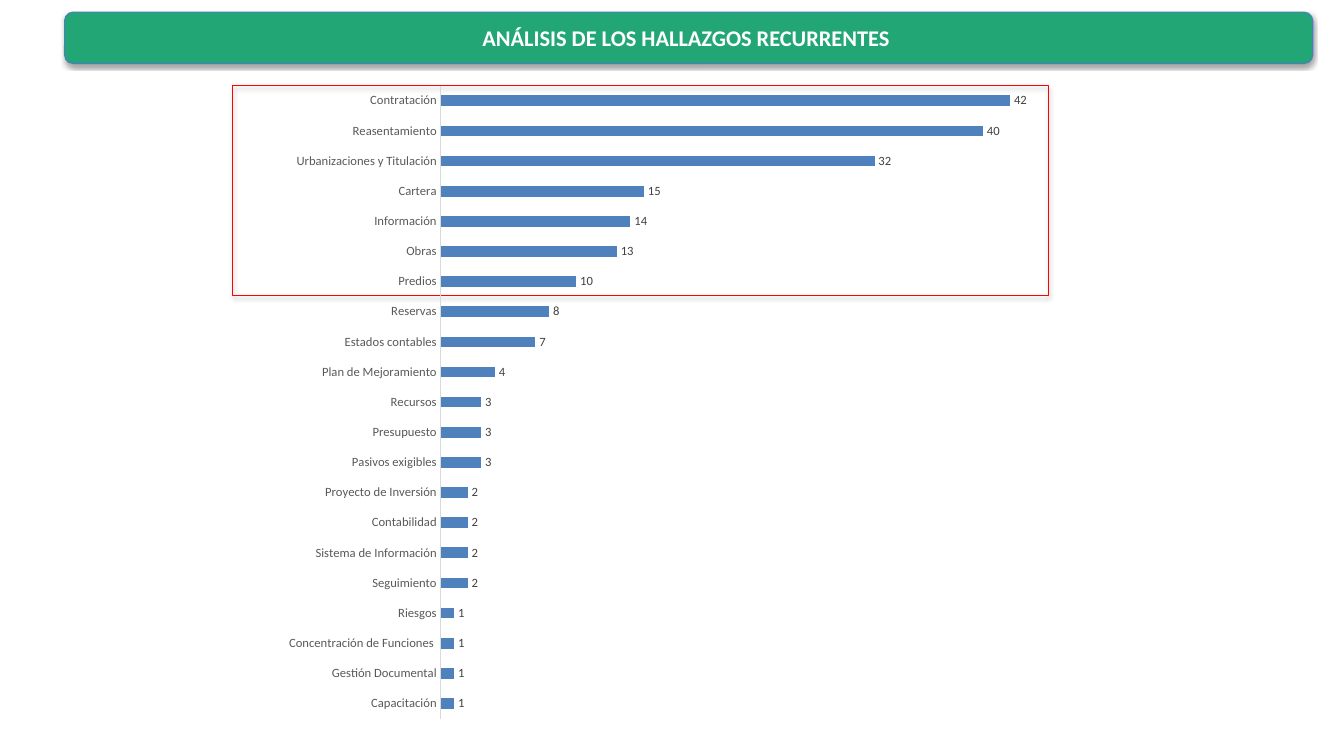
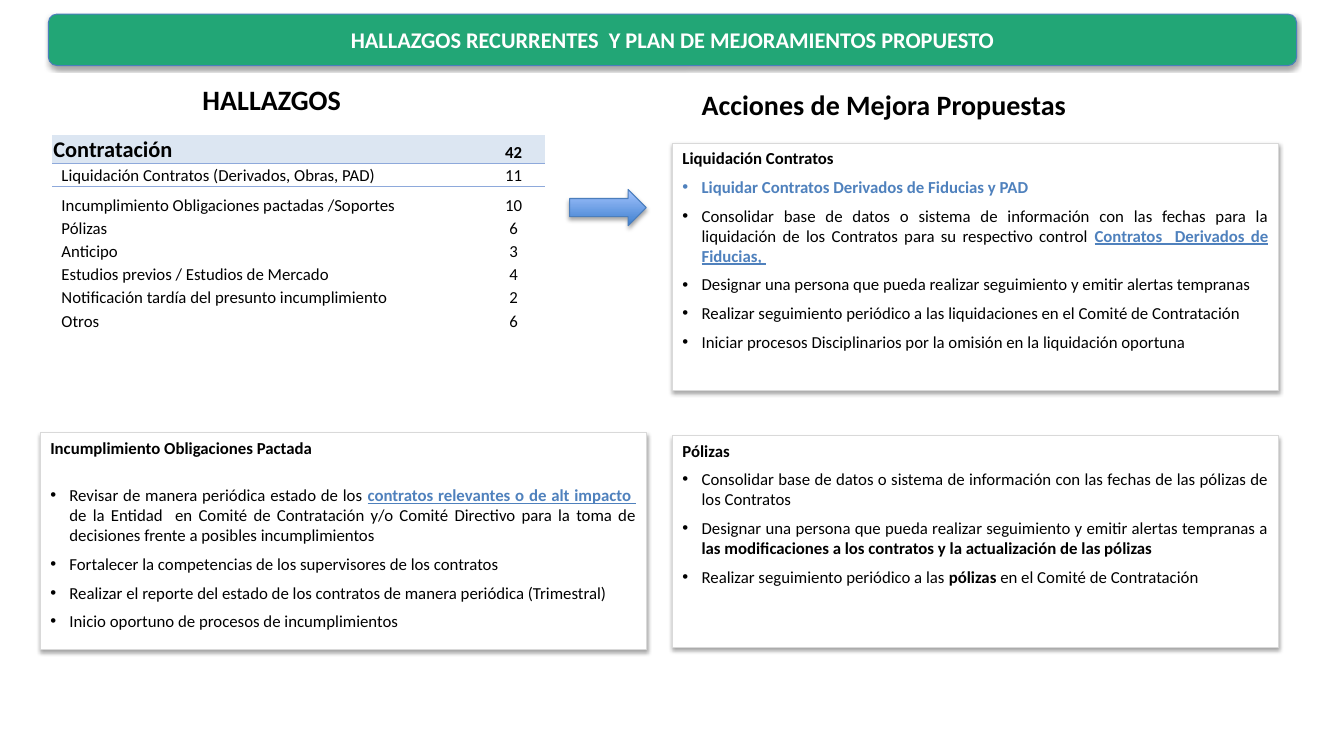
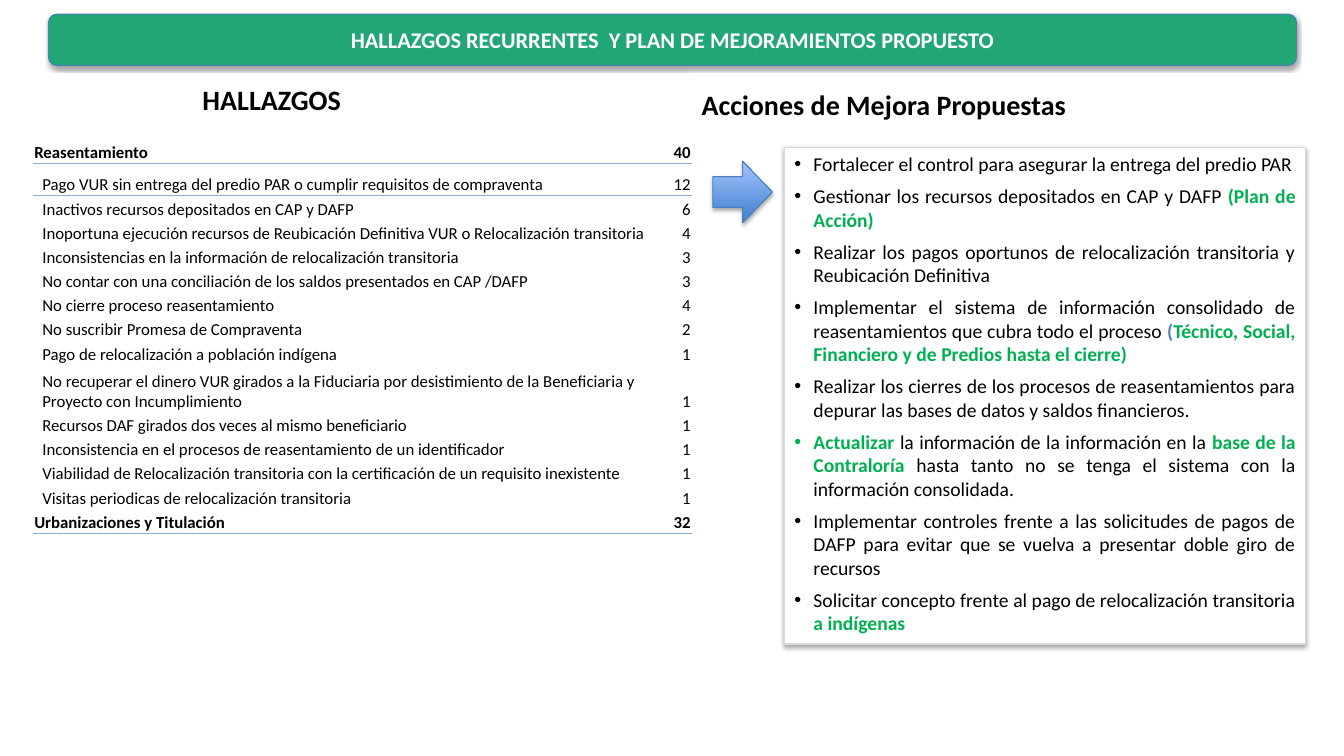
from pptx import Presentation
from pptx.chart.data import CategoryChartData
from pptx.dml.color import RGBColor
from pptx.enum.chart import XL_CHART_TYPE as ChartType, XL_LABEL_POSITION as LabelPosition
from pptx.enum.chart import XL_TICK_MARK as TickMark
from pptx.enum.shapes import MSO_SHAPE as Shape
from pptx.enum.text import MSO_ANCHOR as Anchor, MSO_AUTO_SIZE as AutoSize, PP_ALIGN as Align
from pptx.oxml import parse_xml
from pptx.oxml.ns import nsdecls, qn
from pptx.util import Inches, Pt

# Shared look
FONT = "Calibri"
BLACK, WHITE, GREEN_BAND, EDGE = "000000", "FFFFFF", "22A676", "4B7EBC"
BLUE, GREEN, RED, GRAY = "4F81BD", "00B050", "FF0000", "D9D9D9"
RULE, HEADER_FILL = "8EA9DB", "DCE6F2"
ARROW_STOPS = ("3F80CE", "A4C4FF")
NO_TABLE_STYLE = "{2D5ABB26-0587-4C30-8999-92F81FD0307C}"
RUN_STYLES = {  # colour, underline; every styled run is bold
    "bold": (BLACK, False),
    "blue": (BLUE, False),
    "link": (BLUE, True),
    "green": (GREEN, False),
}

# Content
RECURRENT_TITLE = "ANÁLISIS DE LOS HALLAZGOS RECURRENTES "
PLAN_TITLE = "HALLAZGOS RECURRENTES  Y PLAN DE MEJORAMIENTOS PROPUESTO"
COLUMN_HEADINGS = [("HALLAZGOS", 1.91, 0.77, 1.59), ("Acciones de Mejora Propuestas", 6.86, 0.82, 3.85)]

FINDINGS = [
    ("Contratación", 42), ("Reasentamiento", 40), ("Urbanizaciones y Titulación", 32),
    ("Cartera", 15), ("Información", 14), ("Obras", 13), ("Predios", 10), ("Reservas", 8),
    ("Estados contables", 7), ("Plan de Mejoramiento", 4), ("Recursos", 3),
    ("Presupuesto", 3), ("Pasivos exigibles", 3), ("Proyecto de Inversión", 2),
    ("Contabilidad", 2), ("Sistema de Información", 2), ("Seguimiento", 2), ("Riesgos", 1),
    ("Concentración de Funciones ", 1), ("Gestión Documental", 1), ("Capacitación", 1),
]

CONTRACT_ROWS = [
    ("Contratación", 42),
    ("Liquidación Contratos (Derivados, Obras, PAD)", 11),
    ("Incumplimiento Obligaciones pactadas /Soportes", 10),
    ("Pólizas", 6),
    ("Anticipo", 3),
    ("Estudios previos / Estudios de Mercado", 4),
    ("Notificación tardía del presunto incumplimiento", 2),
    ("Otros", 6),
]
RESETTLEMENT_ROWS = [
    ("Reasentamiento", 40),
    ("Pago VUR sin entrega del predio PAR o cumplir requisitos de compraventa", 12),
    ("Inactivos recursos depositados en CAP y DAFP", 6),
    ("Inoportuna ejecución recursos de Reubicación Definitiva VUR o Relocalización transitoria", 4),
    ("Inconsistencias en la información de relocalización transitoria", 3),
    ("No contar con una conciliación de los saldos presentados en CAP /DAFP", 3),
    ("No cierre proceso reasentamiento", 4),
    ("No suscribir Promesa de Compraventa", 2),
    ("Pago de relocalización a población indígena", 1),
    ("No recuperar el dinero VUR girados a la Fiduciaria por desistimiento de la "
     "Beneficiaria y Proyecto con Incumplimiento", 1),
    ("Recursos DAF girados dos veces al mismo beneficiario", 1),
    ("Inconsistencia en el procesos de reasentamiento de un identificador", 1),
    ("Viabilidad de Relocalización transitoria con la certificación de un requisito inexistente", 1),
    ("Visitas periodicas de relocalización transitoria", 1),
    ("Urbanizaciones y Titulación", 32),
]

# Each bullet is a list of runs: plain text, or (text, style)
SETTLEMENT_ACTIONS = [
    [("Liquidar Contratos Derivados de Fiducias y PAD", "blue")],
    ["Consolidar base de datos o sistema de información con las fechas para la liquidación "
     "de los Contratos para su respectivo control ",
     ("Contratos  Derivados de Fiducias, ", "link")],
    ["Designar una persona que pueda realizar seguimiento y emitir alertas tempranas "],
    ["Realizar seguimiento periódico a las liquidaciones en el Comité de Contratación"],
    ["Iniciar procesos Disciplinarios por la omisión en la liquidación oportuna"],
]
BREACH_ACTIONS = [
    ["Revisar de manera periódica estado de los ",
     ("contratos relevantes o de alt impacto  ", "link"),
     "de la Entidad  en Comité de Contratación y/o Comité Directivo para la toma de "
     "decisiones frente a posibles incumplimientos"],
    ["Fortalecer la competencias de los supervisores de los contratos"],
    ["Realizar el reporte del estado de los contratos de manera periódica (Trimestral)"],
    ["Inicio oportuno de procesos de incumplimientos"],
]
POLICY_ACTIONS = [
    ["Consolidar base de datos o sistema de información con las fechas de las pólizas de "
     "los Contratos "],
    ["Designar una persona que pueda realizar seguimiento y emitir alertas tempranas a ",
     ("las modificaciones a los contratos y la actualización de las pólizas", "bold")],
    ["Realizar seguimiento periódico a las ", ("pólizas", "bold"),
     " en el Comité de Contratación"],
]
RESETTLEMENT_ACTIONS = [
    ["Fortalecer el control para asegurar la entrega del predio PAR"],
    ["Gestionar los recursos depositados en CAP y DAFP ", ("(Plan de Acción)", "green")],
    ["Realizar los pagos oportunos de relocalización transitoria y Reubicación Definitiva "],
    ["Implementar el sistema de información consolidado de reasentamientos que cubra todo "
     "el proceso ", ("(", "blue"),
     ("Técnico, Social, Financiero y de Predios hasta el cierre)", "green")],
    ["Realizar los cierres de los procesos de reasentamientos para depurar las bases de "
     "datos y saldos financieros."],
    [("Actualizar ", "green"), "la información de la información en la ",
     ("base de la Contraloría", "green"),
     " hasta tanto no se tenga el sistema con la información consolidada."],
    ["Implementar controles frente a las solicitudes de pagos de DAFP para evitar que se "
     "vuelva a presentar doble giro de recursos"],
    ["Solicitar concepto frente al pago de relocalización transitoria ",
     ("a indígenas", "green")],
]


def color(value):
    return RGBColor.from_string(value)


def set_font(font, size, value=BLACK, bold=False):
    font.name, font.size, font.bold = FONT, Pt(size), bold
    font.color.rgb = color(value)


def place(*lengths):
    return [Inches(length) for length in lengths]


def add_box(slide, kind, position, fill, line):
    """Outlined shape with the soft shadow that all boxes share."""
    shape = slide.shapes.add_shape(kind, *place(*position))
    if fill:
        shape.fill.solid()
        shape.fill.fore_color.rgb = color(fill)
    else:
        shape.fill.background()
    shape.line.color.rgb = color(line)
    shape.line.width = Pt(0.75)
    shape.shadow.inherit = False
    shape._element.spPr.find(qn("a:effectLst")).append(parse_xml(
        f'<a:outerShdw {nsdecls("a")} blurRad="{Pt(3.1)}" dist="{Pt(1.8)}" dir="5400000" '
        f'rotWithShape="0"><a:srgbClr val="{BLACK}"><a:alpha val="35000"/></a:srgbClr>'
        '</a:outerShdw>'))
    return shape


def add_title(slide, text, left, top):
    position = (left, top, 12.38, 0.51)
    band = add_box(slide, Shape.ROUNDED_RECTANGLE, position, GREEN_BAND, EDGE)
    title = slide.shapes.title
    title.left, title.top, title.width, title.height = place(*position)
    band._element.addnext(title._element)
    frame = title.text_frame
    frame.text = text
    frame.vertical_anchor = Anchor.MIDDLE
    frame.auto_size = AutoSize.NONE
    paragraph = frame.paragraphs[0]
    paragraph.alignment = Align.CENTER
    set_font(paragraph.font, 16, WHITE, True)


def add_arrow(slide, *position):
    arrow = add_box(slide, Shape.RIGHT_ARROW, position, BLUE, EDGE)
    arrow.fill.gradient()
    arrow.fill.gradient_angle = 90
    for stop, value in zip(arrow.fill.gradient_stops, ARROW_STOPS):
        stop.color.rgb = color(value)


def add_panel(slide, position, heading, bullets, size=12, first_gap=6):
    frame = add_box(slide, Shape.RECTANGLE, position, WHITE, GRAY).text_frame
    frame.word_wrap = True
    frame.vertical_anchor = Anchor.TOP
    paragraph = frame.paragraphs[0]
    if heading:
        paragraph.text = heading
        paragraph.alignment = Align.JUSTIFY
        set_font(paragraph.font, size, bold=True)
    for index, runs in enumerate(bullets):
        if heading or index:
            paragraph = frame.add_paragraph()
            paragraph.space_before = Pt(6 if index else first_gap)
        paragraph.alignment = Align.JUSTIFY
        properties = paragraph._p.get_or_add_pPr()
        properties.set("marL", str(Inches(0.19)))
        properties.set("indent", str(-Inches(0.19)))
        properties.append(parse_xml(f'<a:buFont {nsdecls("a")} typeface="Arial"/>'))
        properties.append(parse_xml(f'<a:buChar {nsdecls("a")} char="•"/>'))
        set_font(paragraph.font, size)
        for item in runs:
            text, style = (item, None) if isinstance(item, str) else item
            run = paragraph.add_run()
            run.text = text
            if style:
                value, underline = RUN_STYLES[style]
                run.font.bold = True
                run.font.color.rgb = color(value)
                if underline:
                    run.font.underline = True


def add_rule(cell, side):
    cell._tc.get_or_add_tcPr().insert(0, parse_xml(
        f'<a:{side} {nsdecls("a")} w="{Pt(0.5)}"><a:solidFill><a:srgbClr val="{RULE}"/>'
        f'</a:solidFill></a:{side}>'))


def add_findings_table(slide, left, top, widths, heights, rows, groups, align,
                       group_fill=None, group_size=12):
    """Two-column table; groups holds the indexes of the bold, underlined rows."""
    table = slide.shapes.add_table(
        len(rows), 2, *place(left, top, sum(widths), sum(heights))).table
    table.first_row = table.horz_banding = False
    table._tbl.tblPr.find(qn("a:tableStyleId")).text = NO_TABLE_STYLE
    for column, width in zip(table.columns, widths):
        column.width = Inches(width)
    for index, (row, height) in enumerate(zip(table.rows, heights)):
        row.height = Inches(height)
        is_group = index in groups
        for column, cell in enumerate(row.cells):
            cell.text = str(rows[index][column])
            cell.vertical_anchor = Anchor.BOTTOM
            indent = 0.01 if is_group or column else 0.09
            cell.margin_left, cell.margin_top, cell.margin_right, cell.margin_bottom = place(
                indent, 0.01, 0.01, 0)
            if is_group and group_fill:
                cell.fill.solid()
                cell.fill.fore_color.rgb = color(group_fill)
            else:
                cell.fill.background()
            if is_group:
                add_rule(cell, "lnB")
            elif index - 1 in groups:
                add_rule(cell, "lnT")
            paragraph = cell.text_frame.paragraphs[0]
            paragraph.alignment = align if column else Align.LEFT
            set_font(paragraph.font, group_size if is_group and not column else 12, bold=is_group)


def add_findings_chart(slide):
    data = CategoryChartData()
    bottom_up = FINDINGS[::-1]
    data.categories = [name for name, _ in bottom_up]
    data.add_series("Hallazgos", [count for _, count in bottom_up])
    chart = slide.shapes.add_chart(
        ChartType.BAR_CLUSTERED, *place(2.71, 0.72, 7.87, 6.54), data).chart
    chart.has_legend = chart.has_title = False
    set_font(chart.font, 10)
    plot = chart.plots[0]
    plot.gap_width = 182
    plot.vary_by_categories = False
    bars = plot.series[0].format.fill
    bars.solid()
    bars.fore_color.rgb = color(BLUE)
    plot.has_data_labels = True
    labels = plot.data_labels
    labels.show_value = True
    labels.position = LabelPosition.OUTSIDE_END
    set_font(labels.font, 9, "404040")
    names = chart.category_axis
    names.major_tick_mark = names.minor_tick_mark = TickMark.NONE
    names.has_major_gridlines = False
    names.format.line.color.rgb = color(GRAY)
    names.format.line.width = Pt(0.75)
    set_font(names.tick_labels.font, 9, "595959")
    counts = chart.value_axis
    counts.minimum_scale, counts.maximum_scale = 0, 45
    counts.has_major_gridlines = False
    counts.visible = False


def add_slide(presentation):
    return presentation.slides.add_slide(presentation.slide_layouts[5])


def add_plan_slide(presentation):
    slide = add_slide(presentation)
    add_title(slide, PLAN_TITLE, 0.48, 0.14)
    for text, left, top, width in COLUMN_HEADINGS:
        frame = slide.shapes.add_textbox(*place(left, top, width, 0.44)).text_frame
        frame.word_wrap = False
        frame.auto_size = AutoSize.SHAPE_TO_FIT_TEXT
        frame.text = text
        set_font(frame.paragraphs[0].font, 20, bold=True)
    return slide


def main():
    presentation = Presentation()
    presentation.slide_width, presentation.slide_height = place(13.33, 7.5)

    # Findings by subject, the most frequent ones framed
    slide = add_slide(presentation)
    add_box(slide, Shape.RECTANGLE, (2.31, 0.85, 8.09, 2.08), None, RED)
    add_title(slide, RECURRENT_TITLE, 0.64, 0.12)
    add_findings_chart(slide)

    # Contracts
    slide = add_plan_slide(presentation)
    add_findings_table(slide, 0.52, 1.34, (4.26, 0.63), [0.28, 0.23, 0.29] + [0.23] * 5,
                       CONTRACT_ROWS, {0}, Align.CENTER, HEADER_FILL, 16)
    add_arrow(slide, 5.65, 1.88, 0.76, 0.36)
    add_panel(slide, (6.67, 1.42, 6.01, 2.45), "Liquidación Contratos", SETTLEMENT_ACTIONS)
    add_panel(slide, (0.4, 4.29, 6.01, 2.15), "Incumplimiento Obligaciones Pactada",
              BREACH_ACTIONS, first_gap=19.5)
    add_panel(slide, (6.67, 4.32, 6.01, 2.1), "Pólizas", POLICY_ACTIONS)

    # Resettlement
    slide = add_plan_slide(presentation)
    add_arrow(slide, 7.07, 1.6, 0.59, 0.61)
    add_panel(slide, (7.78, 1.46, 5.17, 4.93), None, RESETTLEMENT_ACTIONS, size=14)
    add_findings_table(slide, 0.33, 1.38, (6.2, 0.33),
                       [0.24, 0.32] + [0.24] * 7 + [0.47] + [0.24] * 5,
                       RESETTLEMENT_ROWS, {0, len(RESETTLEMENT_ROWS) - 1}, Align.RIGHT)

    presentation.save("out.pptx")


if __name__ == "__main__":
    main()
